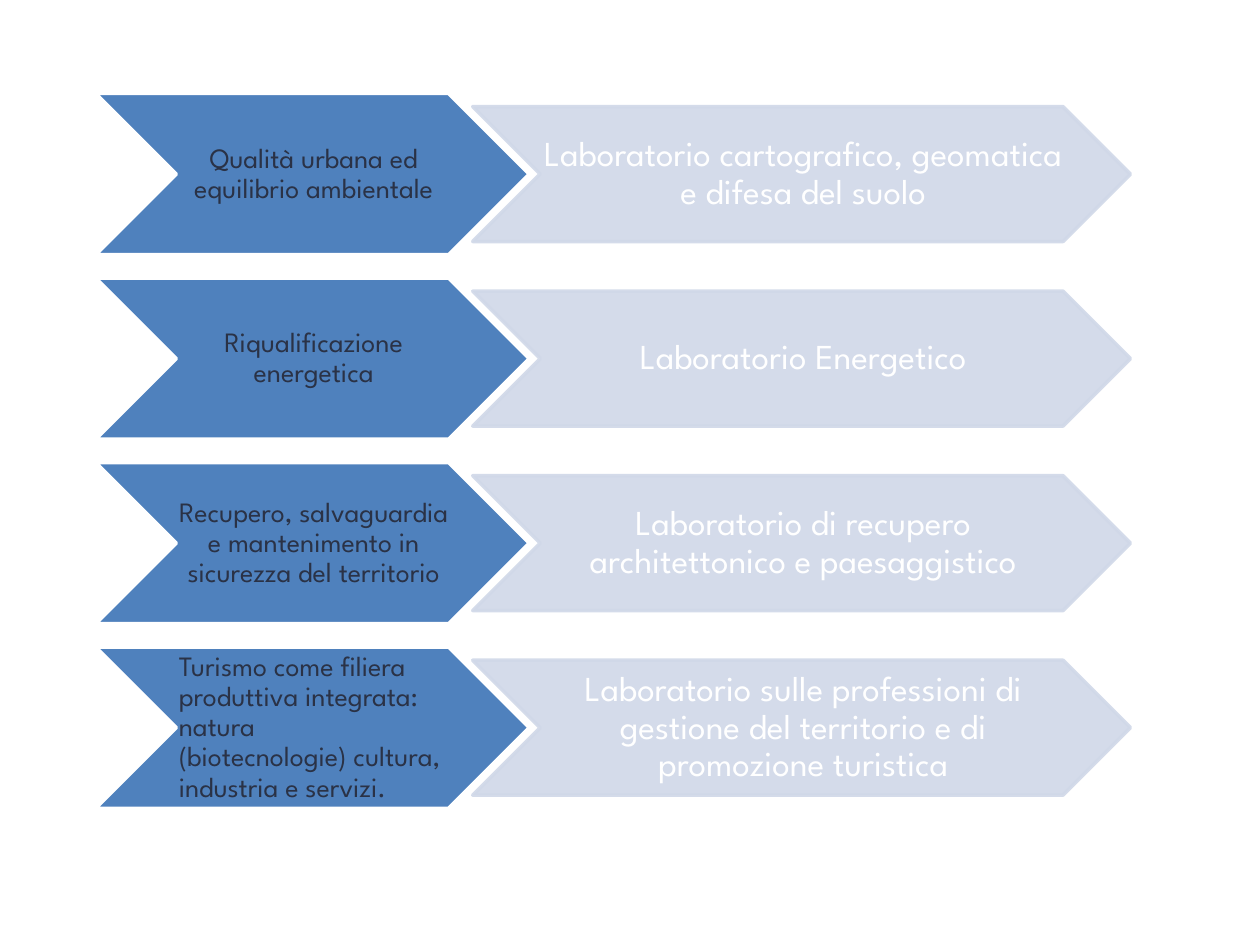
from lxml.etree import SubElement
from pptx import Presentation
from pptx.dml.color import RGBColor
from pptx.enum.shapes import MSO_SHAPE
from pptx.enum.text import MSO_ANCHOR, PP_ALIGN
from pptx.oxml.ns import qn
from pptx.util import Cm, Pt

BLUE = RGBColor(0x4F, 0x81, 0xBD)
PALE = RGBColor(0xD0, 0xD8, 0xE8)
WHITE = RGBColor(0xFF, 0xFF, 0xFF)
NAVY = RGBColor(0x2A, 0x32, 0x46)

FONT = "League Spartan"
FIRST_CENTER = 3.51  # cm, middle of the first row
ROW_PITCH = 3.72

# Chevron styles, lengths in cm
THEME = dict(left=1.93, width=8.74, height=3.25, inset=0.05,
             fill=BLUE, line=WHITE, opacity=100, size=16, color=NAVY)
LABORATORY = dict(left=9.53, width=13.26, height=2.72, inset=0.07,
                  fill=PALE, line=PALE, opacity=90, size=20, color=WHITE)

# Theme paragraphs, their alignment, and the matching laboratory
ROWS = [
    (["Qualità urbana ed equilibrio ambientale"], PP_ALIGN.CENTER,
     "Laboratorio cartografico, geomatica e difesa del suolo"),
    (["Riqualificazione energetica"], PP_ALIGN.CENTER,
     "Laboratorio Energetico"),
    (["Recupero, salvaguardia e mantenimento in sicurezza del territorio"],
     PP_ALIGN.CENTER,
     "Laboratorio di recupero architettonico e paesaggistico"),
    (["Turismo come filiera produttiva integrata: natura",
      "(biotecnologie) cultura, industria e servizi."], PP_ALIGN.LEFT,
     "Laboratorio sulle professioni di gestione del territorio "
     "e di promozione turistica"),
]


def set_attributes(target, values):
    for name, value in values.items():
        setattr(target, name, value)


def paint(shape, style):
    shape.shadow.inherit = False
    shape.fill.solid()
    shape.fill.fore_color.rgb = style["fill"]
    shape.line.color.rgb = style["line"]
    shape.line.width = Pt(2)
    if style["opacity"] < 100:
        for color in shape._element.spPr.iter(qn("a:srgbClr")):
            SubElement(color, qn("a:alpha"), val=str(style["opacity"] * 1000))


def write(frame, texts, alignment, style):
    set_attributes(frame, dict(
        word_wrap=True, vertical_anchor=MSO_ANCHOR.MIDDLE,
        margin_left=Cm(style["inset"]), margin_right=0,
        margin_top=Cm(0.03), margin_bottom=Cm(0.03)))
    for index, text in enumerate(texts):
        para = frame.paragraphs[0] if index == 0 else frame.add_paragraph()
        set_attributes(para, dict(alignment=alignment, line_spacing=0.9))
        span = para.add_run()
        span.text = text
        set_attributes(span.font, dict(name=FONT, size=Pt(style["size"])))
        span.font.color.rgb = style["color"]


def add_chevron(page, center, texts, alignment, style):
    shape = page.shapes.add_shape(
        MSO_SHAPE.CHEVRON, Cm(style["left"]), Cm(center - style["height"] / 2),
        Cm(style["width"]), Cm(style["height"]))
    shape.adjustments[0] = 0.5
    paint(shape, style)
    write(shape.text_frame, texts, alignment, style)


def main():
    deck = Presentation()
    set_attributes(deck, dict(slide_width=Cm(25.4), slide_height=Cm(19.05)))
    page = deck.slides.add_slide(deck.slide_layouts[6])

    # One row per theme, each leading to its laboratory
    for index, (theme, alignment, laboratory) in enumerate(ROWS):
        center = FIRST_CENTER + index * ROW_PITCH
        add_chevron(page, center, theme, alignment, THEME)
        add_chevron(page, center, [laboratory], PP_ALIGN.CENTER, LABORATORY)

    deck.save("out.pptx")


if __name__ == "__main__":
    main()
